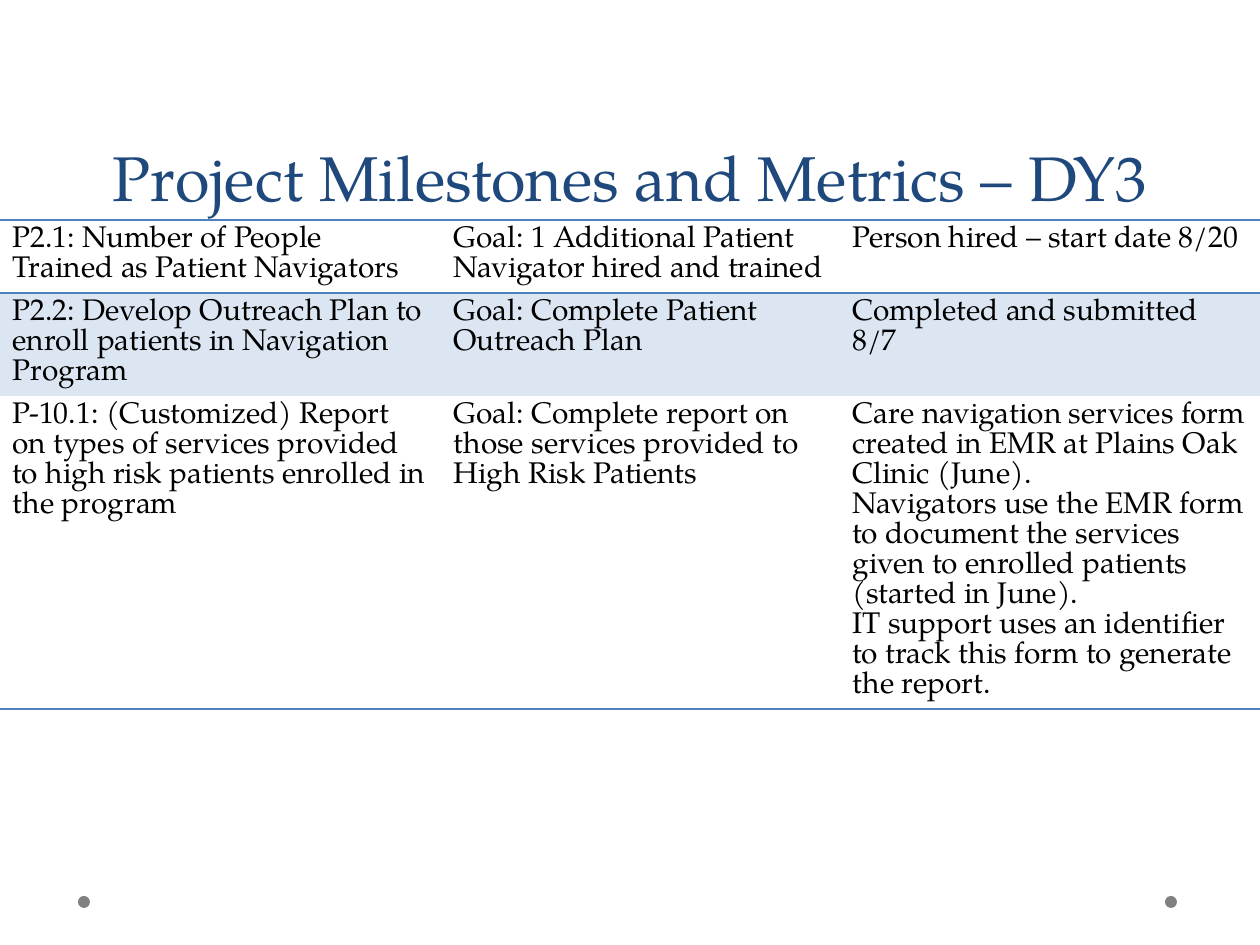
"""Build the project milestones and metrics slide."""
from lxml.etree import SubElement
from pptx import Presentation
from pptx.dml.color import RGBColor as RGB
from pptx.enum.shapes import MSO_SHAPE as SHAPE
from pptx.enum.text import MSO_ANCHOR as ANCHOR, MSO_AUTO_SIZE as AUTOSIZE, PP_ALIGN as ALIGN
from pptx.oxml.ns import qn
from pptx.util import Pt

COLORS = {"title": "1F497D", "text": "000000", "rule": "4F81BD", "band": "DCE6F2", "dot": "808080"}
FONT = "TeX Gyre Pagella"
EMU_PER_PX = 914400 / 126
WIDTH, HEIGHT = 1260, 945
TABLE_TOP = 220
COLUMNS = [441, 399, 420]
ROW_HEIGHTS = [73, 103, 313]
RULED_EDGES = {0, 1, 3}
BANDED_ROW = 1
MILESTONES = [
    ["P2.1: Number of People\nTrained as Patient Navigators",
     "Goal: 1 Additional Patient Navigator hired and trained",
     "Person hired – start date 8/20"],
    ["P2.2: Develop Outreach Plan to enroll patients in Navigation Program",
     "Goal: Complete Patient Outreach Plan",
     "Completed and submitted 8/7"],
    ["P-10.1: (Customized) Report on types of services provided to high risk patients "
     "enrolled in the program",
     "Goal: Complete report on those services provided to High Risk Patients",
     "Care navigation services form created in EMR at Plains Oak Clinic (June).\n"
     "Navigators use the EMR form to document the services given to enrolled patients "
     "(started in June).\n"
     "IT support uses an identifier to track this form to generate the report."],
]


def px(n):
    return round(n * EMU_PER_PX)


def color(name):
    return RGB.from_string(COLORS[name])


class Deck:
    def __init__(self):
        self.prs = Presentation()
        self.prs.slide_width, self.prs.slide_height = px(WIDTH), px(HEIGHT)
        self.s = self.prs.slides.add_slide(self.prs.slide_layouts[5])

    def fill_text(self, tf, text, size, name, spacing, align=ALIGN.LEFT):
        tf.text = text
        for p in tf.paragraphs:
            p.alignment, p.line_spacing = align, Pt(spacing)
            p.font.name, p.font.size = FONT, Pt(size)
            p.font.color.rgb = color(name)

    def title(self, text, x, y, w, h):
        sp = self.s.shapes.title
        sp.left, sp.top, sp.width, sp.height = px(x), px(y), px(w), px(h)
        tf = sp.text_frame
        tf.auto_size, tf.vertical_anchor = AUTOSIZE.NONE, ANCHOR.BOTTOM
        self.fill_text(tf, text, 36, "title", 58, ALIGN.CENTER)

    def dot(self, x, y, size):
        sp = self.s.shapes.add_shape(SHAPE.OVAL, px(x), px(y), px(size), px(size))
        sp.shadow.inherit = False
        sp.fill.solid()
        sp.fill.fore_color.rgb = color("dot")
        sp.line.fill.background()

    def borders(self, cell, top, bottom):
        tc_pr = cell._tc.get_or_add_tcPr()
        for side, ruled in (("L", False), ("R", False), ("T", top), ("B", bottom)):
            ln = SubElement(tc_pr, qn(f"a:ln{side}"), w=str(Pt(1)))
            if ruled:
                fill = SubElement(ln, qn("a:solidFill"))
                SubElement(fill, qn("a:srgbClr"), val=COLORS["rule"])
            else:
                SubElement(ln, qn("a:noFill"))

    def table(self, rows, x, y, widths, heights):
        frame = self.s.shapes.add_table(len(rows), len(widths), px(x), px(y),
                                        px(sum(widths)), px(sum(heights)))
        table = frame.table
        table.first_row = table.horz_banding = False
        for column, w in zip(table.columns, widths):
            column.width = px(w)
        for i, (row, h) in enumerate(zip(rows, heights)):
            table.rows[i].height = px(h)
            for j, text in enumerate(row):
                cell = table.cell(i, j)
                self.fill_text(cell.text_frame, text, 17, "text", 17.14)
                self.borders(cell, i in RULED_EDGES, i + 1 in RULED_EDGES)
                if i == BANDED_ROW:
                    cell.fill.solid()
                    cell.fill.fore_color.rgb = color("band")
                else:
                    cell.fill.background()


def main():
    deck = Deck()
    for x in (1165, 78):
        deck.dot(x, 896, 12)
    deck.title("Project Milestones and Metrics – DY3", 63, 0, 1134, TABLE_TOP)
    deck.table(MILESTONES, 0, TABLE_TOP, COLUMNS, ROW_HEIGHTS)
    deck.prs.save("out.pptx")


if __name__ == "__main__":
    main()
